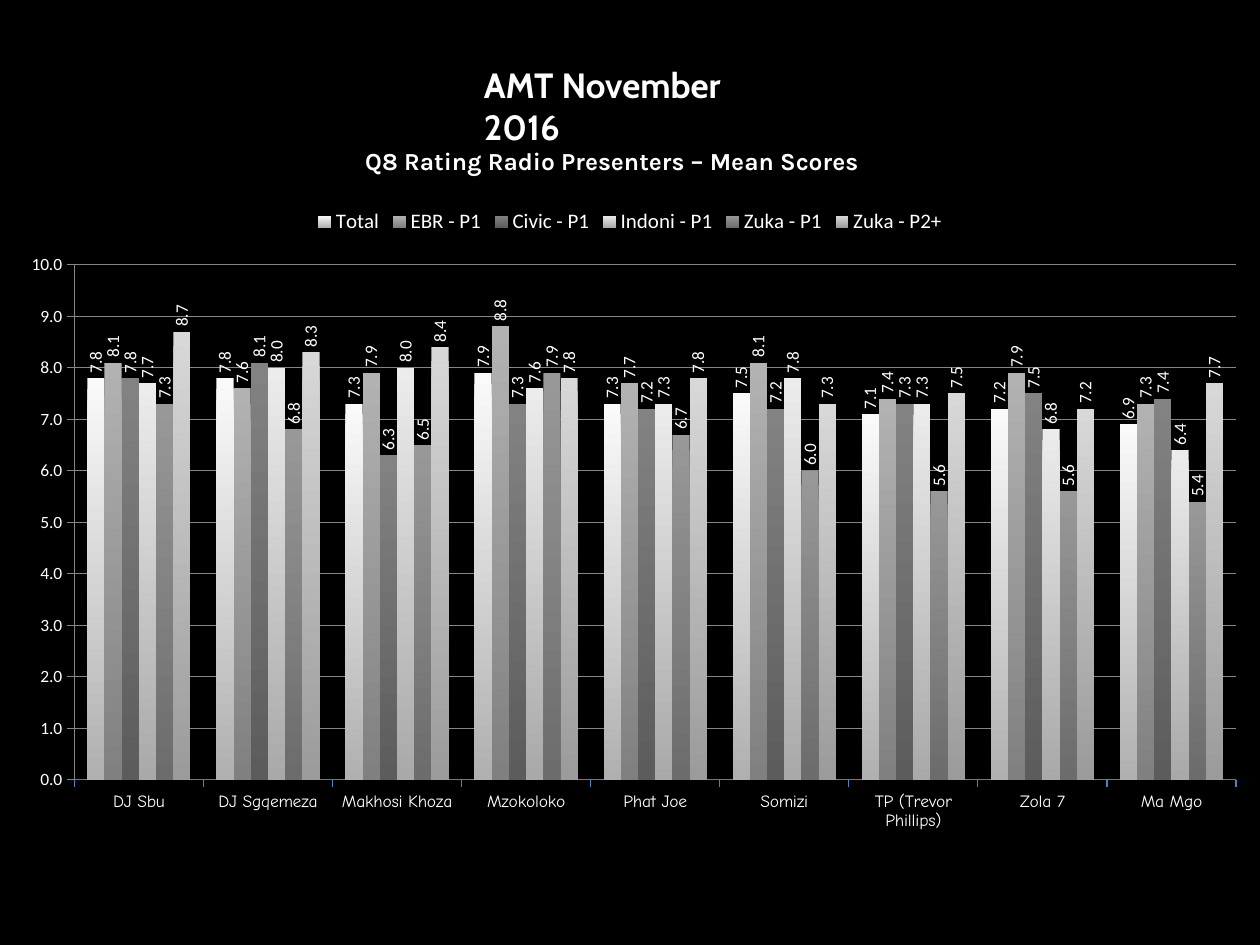
from dataclasses import dataclass

from lxml.etree import SubElement
from pptx import Presentation
from pptx.chart.data import CategoryChartData
from pptx.dml.color import RGBColor
from pptx.enum.chart import XL_CHART_TYPE, XL_LABEL_POSITION, XL_LEGEND_POSITION, XL_TICK_MARK
from pptx.enum.text import MSO_ANCHOR, MSO_AUTO_SIZE, PP_ALIGN
from pptx.oxml.ns import qn
from pptx.util import Inches, Pt

BLACK = RGBColor(0x00, 0x00, 0x00)
WHITE = RGBColor(0xFF, 0xFF, 0xFF)
GRID = RGBColor(0x86, 0x86, 0x86)
BLUE = RGBColor(0x4F, 0x81, 0xBD)
WIDE, HIGH = Inches(10), Inches(7.5)


@dataclass(frozen=True)
class Box:
    left: float
    top: float
    wide: float
    high: float

    def place(self) -> tuple[int, int, int, int]:
        return (int(self.left * WIDE), int(self.top * HIGH),
                int(self.wide * WIDE), int(self.high * HIGH))


@dataclass(frozen=True)
class Head:
    text: str
    box: Box
    font: str
    size: int


@dataclass(frozen=True)
class Group:
    name: str
    scores: tuple[float, ...]
    light: RGBColor
    dark: RGBColor


def gray(level: int) -> RGBColor:
    return RGBColor(level, level, level)


NAMES = ("DJ Sbu", "DJ Sgqemeza", "Makhosi Khoza", "Mzokoloko", "Phat Joe",
         "Somizi", "TP (Trevor Phillips)", "Zola 7", "Ma Mgo")
GROUPS = (
    Group("Total", (7.8, 7.8, 7.3, 7.9, 7.3, 7.5, 7.1, 7.2, 6.9), gray(0xFA), gray(0xB0)),
    Group("EBR - P1", (8.1, 7.6, 7.9, 8.8, 7.7, 8.1, 7.4, 7.9, 7.3), gray(0xB2), gray(0x80)),
    Group("Civic - P1", (7.8, 8.1, 6.3, 7.3, 7.2, 7.2, 7.3, 7.5, 7.4), gray(0x82), gray(0x5C)),
    Group("Indoni - P1", (7.7, 8.0, 8.0, 7.6, 7.3, 7.8, 7.3, 6.8, 6.4), gray(0xEC), gray(0xA9)),
    Group("Zuka - P1", (7.3, 6.8, 6.5, 7.9, 6.7, 6.0, 5.6, 5.6, 5.4), gray(0x98), gray(0x6C)),
    Group("Zuka - P2+", (8.7, 8.3, 8.4, 7.8, 7.8, 7.3, 7.5, 7.2, 7.7), gray(0xD8), gray(0x9B)),
)
TITLE = Head("AMT November 2016", Box(0.374, 0.06, 0.271, 0.06), "Cabin", 20)
TOPIC = Head("Q8 Rating Radio Presenters – Mean Scores",
             Box(0.28, 0.148, 0.442, 0.045), "Karla", 14)
CHART = Box(0, 0.207, 1, 0.672)
PLOT = Box(0.059, 0.111, 0.922, 0.827)


def style(font, size: int, face: str = "Calibri", bold: bool = False) -> None:
    font.size = Pt(size)
    font.name = face
    font.bold = bold
    font.color.rgb = WHITE


def write(shape, head: Head) -> None:
    shape.left, shape.top, shape.width, shape.height = head.box.place()
    frame = shape.text_frame
    frame.word_wrap = True
    frame.auto_size = MSO_AUTO_SIZE.NONE
    frame.vertical_anchor = MSO_ANCHOR.TOP
    line = frame.paragraphs[0]
    line.alignment = PP_ALIGN.LEFT
    run = line.add_run()
    run.text = head.text
    style(run.font, head.size, head.font, True)


def fix_plot(chart, box: Box) -> None:
    area = chart._chartSpace.chart.plotArea
    for old in area.findall(qn("c:layout")):
        area.remove(old)
    frame = SubElement(area, qn("c:layout"))
    area.insert(0, frame)
    rules = SubElement(frame, qn("c:manualLayout"))
    pairs = (("layoutTarget", "inner"), ("xMode", "edge"), ("yMode", "edge"),
             ("x", box.left), ("y", box.top), ("w", box.wide), ("h", box.high))
    for tag, val in pairs:
        SubElement(rules, qn(f"c:{tag}")).set("val", str(val))


def paint(bars, group: Group) -> None:
    fill = bars.format.fill
    fill.gradient()
    fill.gradient_angle = 270
    for stop, shade in zip(fill.gradient_stops, (group.light, group.dark)):
        stop.color.rgb = shade
    bars.invert_if_negative = False
    marks = bars.data_labels
    marks.show_value = True
    marks.number_format = "0.0"
    marks.number_format_is_linked = False
    marks.position = XL_LABEL_POSITION.OUTSIDE_END
    style(marks.font, 10)
    turn = marks._element.find(qn("c:txPr")).find(qn("a:bodyPr"))
    turn.set("rot", "-5400000")
    turn.set("vert", "horz")


def trim(axis, face: str, shade: RGBColor) -> None:
    axis.major_tick_mark = XL_TICK_MARK.OUTSIDE
    axis.minor_tick_mark = XL_TICK_MARK.NONE
    style(axis.tick_labels.font, 10, face)
    axis.format.line.color.rgb = shade
    axis.format.line.width = Pt(0.75)


def draw_chart(slide) -> None:
    data = CategoryChartData(number_format="0.0")
    data.categories = NAMES
    for group in GROUPS:
        data.add_series(group.name, group.scores)
    chart = slide.shapes.add_chart(XL_CHART_TYPE.COLUMN_CLUSTERED, *CHART.place(), data).chart
    style(chart.font, 18)
    chart.has_title = False
    chart.has_legend = True
    chart.legend.position = XL_LEGEND_POSITION.TOP
    chart.legend.include_in_layout = False
    style(chart.legend.font, 12)
    plot = chart.plots[0]
    plot.gap_width = 150
    plot.overlap = 0
    plot.vary_by_categories = False
    for bars, group in zip(plot.series, GROUPS):
        paint(bars, group)
    trim(chart.category_axis, "Comic Neue", BLUE)
    scale = chart.value_axis
    trim(scale, "Calibri", GRID)
    scale.minimum_scale, scale.maximum_scale, scale.major_unit = 0, 10, 1
    scale.tick_labels.number_format = "0.0"
    scale.tick_labels.number_format_is_linked = False
    scale.has_major_gridlines = True
    scale.major_gridlines.format.line.color.rgb = GRID
    scale.major_gridlines.format.line.width = Pt(0.75)
    fix_plot(chart, PLOT)


def main() -> None:
    deck = Presentation()
    deck.slide_width, deck.slide_height = WIDE, HIGH
    slide = deck.slides.add_slide(deck.slide_layouts[5])
    slide.background.fill.solid()
    slide.background.fill.fore_color.rgb = BLACK
    draw_chart(slide)
    write(slide.shapes.title, TITLE)
    write(slide.shapes.add_textbox(*TOPIC.box.place()), TOPIC)
    deck.save("out.pptx")


if __name__ == "__main__":
    main()
